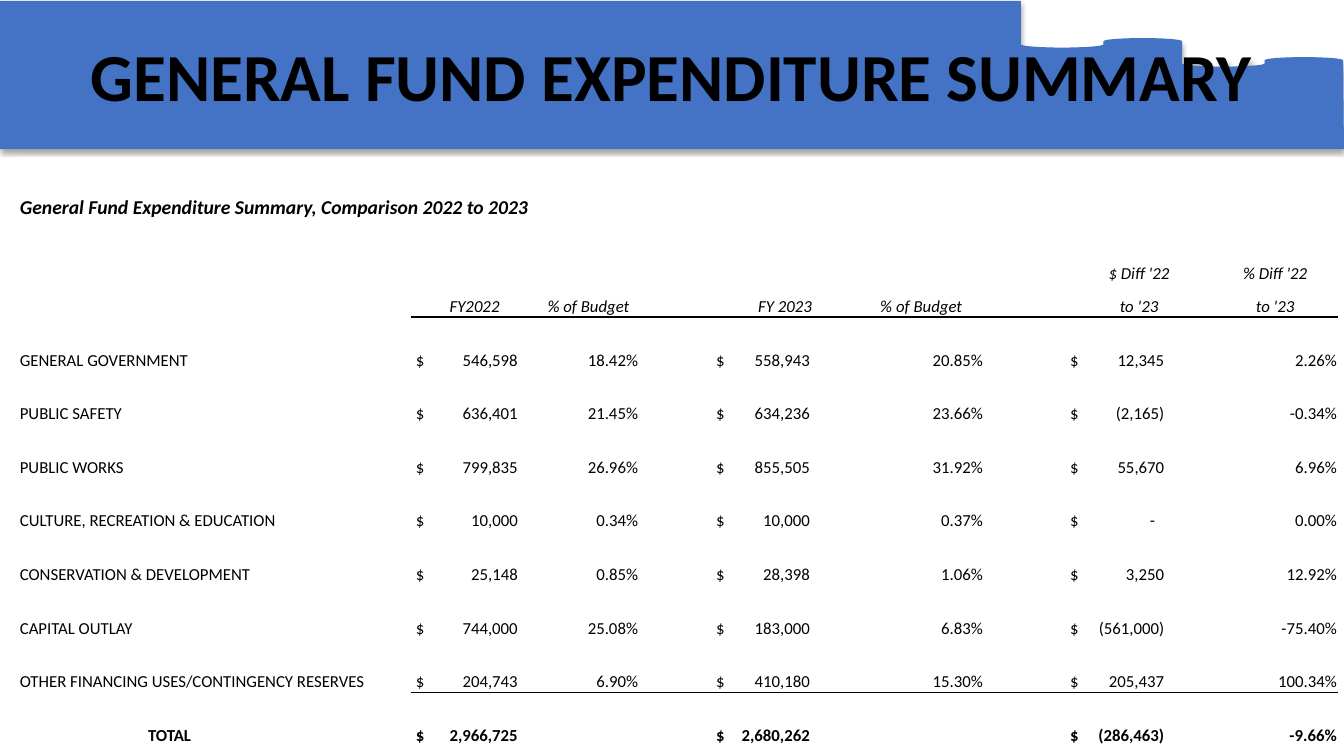
import math
import pptx
import pptx.util
import pptx.dml.color
import pptx.enum.text
import pptx.oxml
import pptx.oxml.ns
from lxml import etree

Cm = pptx.util.Cm
Align = pptx.enum.text.PP_ALIGN
Anchor = pptx.enum.text.MSO_ANCHOR
BLACK = pptx.dml.color.RGBColor(0, 0, 0)
BLUE = pptx.dml.color.RGBColor(0x44, 0x72, 0xC4)
SPACE = pptx.oxml.ns.nsdecls("a")


def put(frame, text, size=12, bold=False, ital=False, align=Align.LEFT, stop=None):
    para = frame.paragraphs[0]
    para.alignment = align
    run = para.add_run()
    run.text = text
    run.font.name = "Calibri"
    run.font.size = pptx.util.Pt(size)
    run.font.bold = bold
    run.font.italic = ital
    run.font.color.rgb = BLACK
    if stop:
        para._p.get_or_add_pPr().append(pptx.oxml.parse_xml(
            f'<a:tabLst {SPACE}><a:tab pos="{Cm(stop)}" algn="r"/></a:tabLst>'))


def rule(cell, side):
    line = pptx.oxml.parse_xml(
        f'<a:{side} {SPACE} w="12700"><a:solidFill><a:srgbClr val="{BLACK}"/>'
        f'</a:solidFill><a:prstDash val="solid"/></a:{side}>')
    cell._tc.get_or_add_tcPr().insert(0, line)


deck = pptx.Presentation()
deck.slide_width = Cm(33.87)
deck.slide_height = Cm(19.05)
slide = deck.slides.add_slide(deck.slide_layouts[6])

STEPS = 16
DIP, BUMP = 2.08, 1.98
edge = [(25.73, 0.02)]
for turn in range(2):
    left = 25.73 + turn * (DIP + BUMP)
    drop = turn * 0.48
    for start, width, level, depth in [
        (left, DIP, 1.12, 0.08),
        (left + DIP, BUMP, 1.04, -0.08),
    ]:
        for step in range(STEPS + 1):
            angle = math.pi * step / STEPS
            edge.append((start + width * (1 - math.cos(angle)) / 2,
                         level + drop + depth * math.sin(angle)))
edge += [(33.87, 3.76), (0, 3.76)]

pen = slide.shapes.build_freeform(Cm(0), Cm(0.02))
pen.add_line_segments([(Cm(x), Cm(y)) for x, y in edge], close=True)
banner = pen.convert_to_shape()
banner.fill.solid()
banner.fill.fore_color.rgb = BLUE
banner.line.fill.background()
banner.shadow.inherit = False
glow = banner._element.spPr.find(pptx.oxml.ns.qn("a:effectLst"))
glow.append(etree.fromstring(
    f'<a:outerShdw {SPACE} blurRad="44450" dist="27940" dir="5400000" algn="ctr" rotWithShape="0">'
    f'<a:srgbClr val="{BLACK}"><a:alpha val="32000"/></a:srgbClr></a:outerShdw>'))
banner.text_frame.word_wrap = True
banner.text_frame.vertical_anchor = Anchor.MIDDLE
put(banner.text_frame, "GENERAL FUND EXPENDITURE SUMMARY", size=48, bold=True, align=Align.CENTER)

HEADS = [
    ["", "", "", "", "", "", "", "$ Diff '22", "% Diff '22"],
    ["", "FY2022", "% of Budget", "", "FY 2023", "% of Budget", "", "to '23", "to '23"],
]
FUNDS = [
    ["GENERAL GOVERNMENT", "546,598", "18.42%", "", "558,943", "20.85%", "", "12,345", "2.26%"],
    ["PUBLIC SAFETY", "636,401", "21.45%", "", "634,236", "23.66%", "", "(2,165)", "-0.34%"],
    ["PUBLIC WORKS", "799,835", "26.96%", "", "855,505", "31.92%", "", "55,670", "6.96%"],
    ["CULTURE, RECREATION & EDUCATION", "10,000", "0.34%", "", "10,000", "0.37%", "", "-", "0.00%"],
    ["CONSERVATION & DEVELOPMENT", "25,148", "0.85%", "", "28,398", "1.06%", "", "3,250", "12.92%"],
    ["CAPITAL OUTLAY", "744,000", "25.08%", "", "183,000", "6.83%", "", "(561,000)", "-75.40%"],
    ["OTHER FINANCING USES/CONTINGENCY RESERVES", "204,743", "6.90%", "",
     "410,180", "15.30%", "", "205,437", "100.34%"],
    ["TOTAL", "2,966,725", "", "", "2,680,262", "", "", "(286,463)", "-9.66%"],
]
WIDTHS = [9.88, 3.2, 2.54, 1.83, 3.71, 3.15, 2.06, 3.71, 3.15]
HEIGHTS = [1.57, 0.81, 0.81, 0.84] + [1.35] * len(FUNDS)
STOPS = {1: 2.57, 4: 2.36, 7: 2.37}
HEAD, FUND = 2, 4
LAST = len(HEIGHTS) - 1
SIDES = {FUND - 1: "lnB", FUND: "lnT", LAST - 1: "lnB", LAST: "lnT"}

frame = slide.shapes.add_table(len(HEIGHTS), len(WIDTHS), Cm(0.48), Cm(3.96),
                               Cm(sum(WIDTHS)), Cm(sum(HEIGHTS)))
table = frame.table
table.first_row = False
table.horz_banding = False
for col, width in zip(table.columns, WIDTHS):
    col.width = Cm(width)
for row, height in zip(table.rows, HEIGHTS):
    row.height = Cm(height)

for r in range(len(HEIGHTS)):
    for c in range(len(WIDTHS)):
        cell = table.cell(r, c)
        cell.fill.background()
        cell.vertical_anchor = Anchor.BOTTOM
        cell.margin_left = cell.margin_right = cell.margin_top = Cm(0.02)
        cell.margin_bottom = Cm(0)
        if c and r in SIDES:
            rule(cell, SIDES[r])
        if r < HEAD:
            continue
        if r < FUND:
            text = HEADS[r - HEAD][c]
            if text:
                put(cell.text_frame, text, ital=True, align=Align.CENTER)
            continue
        text = FUNDS[r - FUND][c]
        bold = r == LAST
        if not text:
            continue
        if c in STOPS:
            cell.margin_left = Cm(0.12)
            stop = STOPS[c] - (0.23 if text == "-" else 0)
            put(cell.text_frame, "$\t" + text, bold=bold, stop=stop)
        elif c:
            put(cell.text_frame, text, bold=bold, align=Align.RIGHT)
        else:
            cell.margin_left = Cm(3.25 if bold else 0.02)
            put(cell.text_frame, text, bold=bold)

title = table.cell(0, 0)
title.merge(table.cell(0, 2))
put(title.text_frame, "General Fund Expenditure Summary, Comparison 2022 to 2023",
    size=14, bold=True, ital=True)

deck.save("out.pptx")
